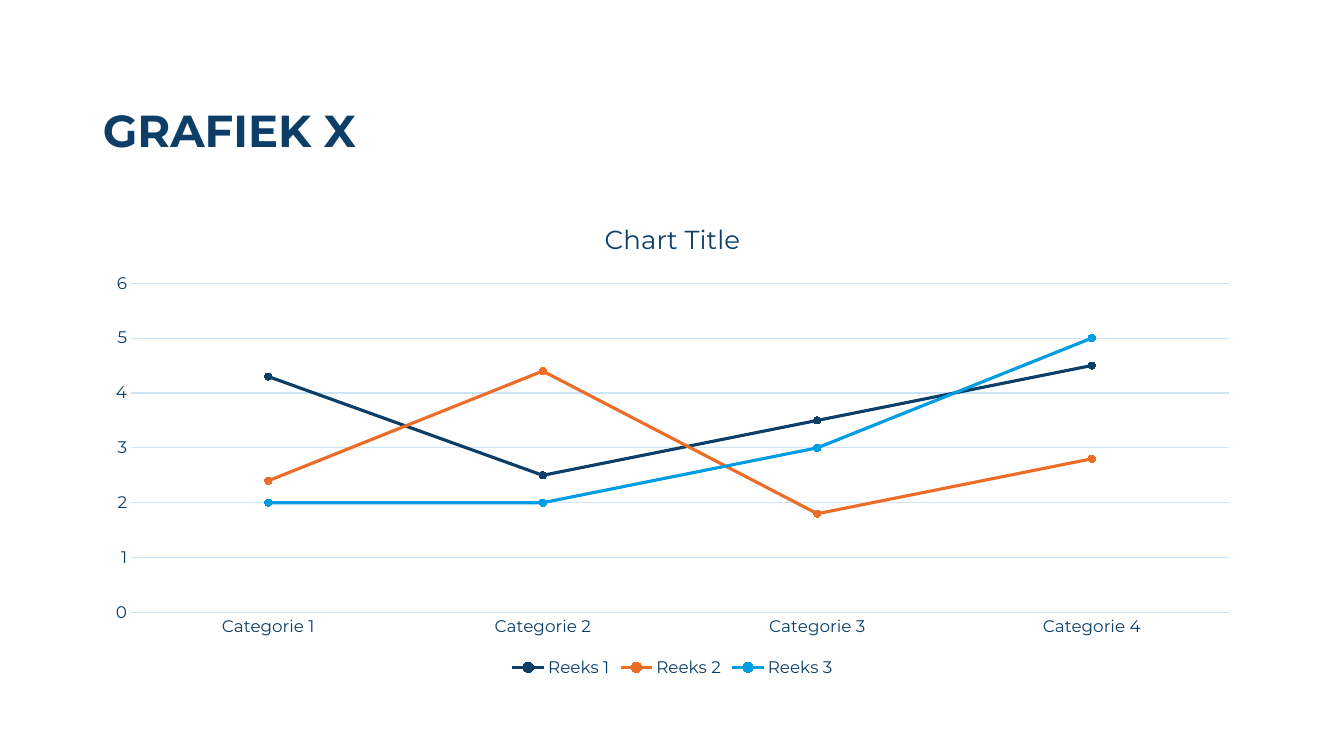
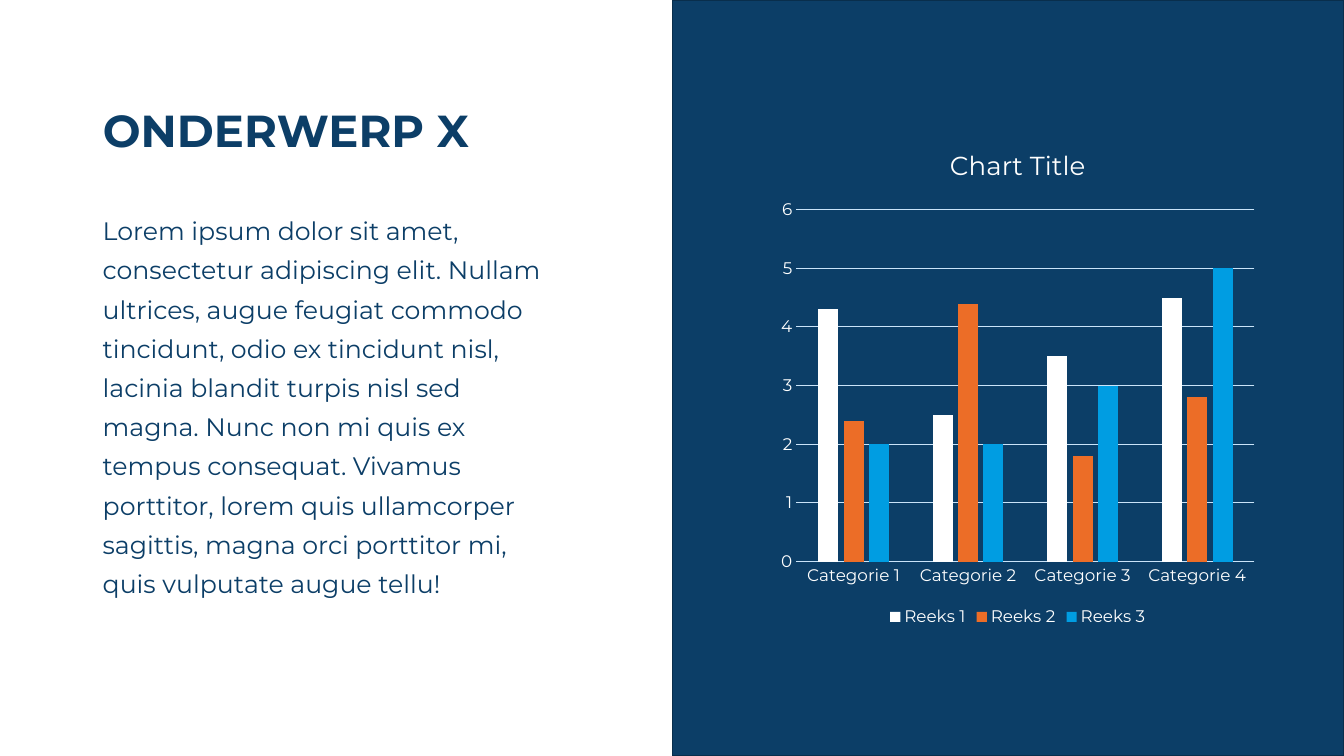
from pptx import Presentation
from pptx import util as u
from pptx.chart.data import CategoryChartData
from pptx.dml.color import RGBColor
from pptx.enum import chart as ch, shapes, text

FONT = "Montserrat"
NAVY, NAVY_EDGE, ORANGE, BLUE = "0C3E67", "092E4C", "EC6D27", "009DE2"
PALE, WHITE = "CAE4F9", "FFFFFF"
LEFT, BODY_TOP, WIDTH, BODY_H = 0.92, 2, 11.5, 4.76
CATEGORIES = [f"Categorie {n}" for n in range(1, 5)]
SERIES = {
    "Reeks 1": (4.3, 2.5, 3.5, 4.5),
    "Reeks 2": (2.4, 4.4, 1.8, 2.8),
    "Reeks 3": (2, 2, 3, 5),
}
BODY = (
    "Lorem ipsum dolor sit amet, consectetur adipiscing elit. Nullam ultrices, "
    "augue feugiat commodo tincidunt, odio ex tincidunt nisl, lacinia blandit "
    "turpis nisl sed magna. Nunc non mi quis ex tempus consequat. Vivamus "
    "porttitor, lorem quis ullamcorper sagittis, magna orci porttitor mi, quis "
    "vulputate augue tellu!"
)


def rgb(value):
    return RGBColor.from_string(value)


def box(left, top, width, height):
    return [u.Inches(v) for v in (left, top, width, height)]


def style_font(font, size, color, bold=False):
    font.name = FONT
    font.size = u.Pt(size)
    font.bold = bold
    font.color.rgb = rgb(color)


def style_line(line, color, width):
    line.color.rgb = rgb(color)
    line.width = u.Pt(width)


def write(tf, content, size=18, color=NAVY, bold=False, spacing=None,
          align=text.PP_ALIGN.LEFT):
    tf.word_wrap = True
    tf.auto_size = text.MSO_AUTO_SIZE.NONE
    tf.vertical_anchor = text.MSO_ANCHOR.TOP
    p = tf.paragraphs[0]
    p.alignment = align
    p.line_spacing = spacing
    r = p.add_run()
    r.text = content
    style_font(r.font, size, color, bold)


def add_titled_slide(prs, title):
    s = prs.slides.add_slide(prs.slide_layouts[5])
    sp = s.shapes.title
    sp.left, sp.top, sp.width, sp.height = box(LEFT, 1.03, WIDTH, 0.82)
    write(sp.text_frame, title, size=32, bold=True, spacing=0.9)
    return s


def add_panel(s, left, width, height):
    sp = s.shapes.add_shape(shapes.MSO_SHAPE.RECTANGLE, *box(left, 0, width, height))
    sp.shadow.inherit = False
    sp.fill.solid()
    sp.fill.fore_color.rgb = rgb(NAVY)
    style_line(sp.line, NAVY_EDGE, 1)


def add_styled_chart(s, kind, place, color):
    data = CategoryChartData()
    data.categories = CATEGORIES
    for name, values in SERIES.items():
        data.add_series(name, values)
    chart = s.shapes.add_chart(kind, *box(*place), data).chart
    style_font(chart.font, 10, color)

    chart.has_title = True
    p = chart.chart_title.text_frame.paragraphs[0]
    r = p.add_run()
    r.text = "Chart Title"
    style_font(r.font, 18.6, color)
    chart.chart_title.include_in_layout = False

    chart.has_legend = True
    chart.legend.position = ch.XL_LEGEND_POSITION.BOTTOM
    chart.legend.include_in_layout = False
    style_font(chart.legend.font, 12, color)

    for axis in (chart.category_axis, chart.value_axis):
        axis.major_tick_mark = axis.minor_tick_mark = ch.XL_TICK_MARK.NONE
        style_font(axis.tick_labels.font, 12, color)
    style_line(chart.category_axis.format.line, PALE, 0.75)
    chart.value_axis.format.line.fill.background()
    chart.value_axis.has_major_gridlines = True
    style_line(chart.value_axis.major_gridlines.format.line, PALE, 0.75)

    plot = chart.plots[0]
    plot.vary_by_categories = False
    return plot, list(zip(plot.series, (color, ORANGE, BLUE)))


def add_line_chart(s, place, color):
    _, colored = add_styled_chart(s, ch.XL_CHART_TYPE.LINE_MARKERS, place, color)
    for series, hue in colored:
        series.smooth = False
        style_line(series.format.line, hue, 2.25)
        marker = series.marker
        marker.style = ch.XL_MARKER_STYLE.CIRCLE
        marker.size = 5
        marker.format.fill.solid()
        marker.format.fill.fore_color.rgb = rgb(hue)
        style_line(marker.format.line, hue, 0.75)


def add_column_chart(s, place, color):
    plot, colored = add_styled_chart(s, ch.XL_CHART_TYPE.COLUMN_CLUSTERED, place, color)
    plot.gap_width = 219
    plot.overlap = -27
    for series, hue in colored:
        series.format.fill.solid()
        series.format.fill.fore_color.rgb = rgb(hue)


def main():
    prs = Presentation()
    prs.slide_width, prs.slide_height = u.Inches(13.33), u.Inches(7.5)

    s = add_titled_slide(prs, "GRAFIEK X")
    add_line_chart(s, (LEFT, BODY_TOP, WIDTH, BODY_H), NAVY)

    s = add_titled_slide(prs, "ONDERWERP X")
    body = s.shapes.add_textbox(*box(LEFT, BODY_TOP, 4.61, BODY_H))
    write(body.text_frame, BODY, spacing=u.Pt(28))
    add_panel(s, 6.67, 6.66, 7.5)
    add_column_chart(s, (7.65, 1.26, 4.89, 5), WHITE)

    prs.save("out.pptx")


if __name__ == "__main__":
    main()
